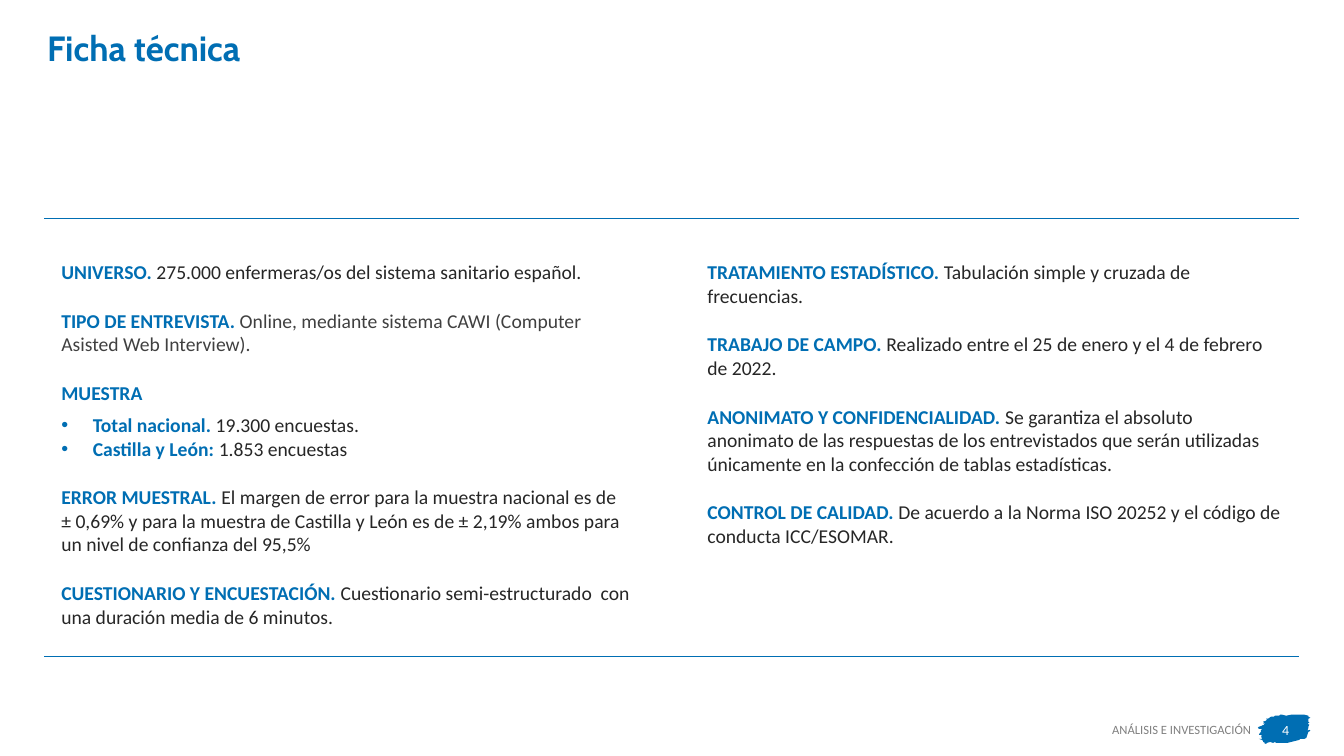
from copy import deepcopy

from lxml import etree
from pptx import Presentation
from pptx.dml.color import RGBColor
from pptx.enum.shapes import MSO_CONNECTOR, MSO_SHAPE
from pptx.enum.text import MSO_ANCHOR, PP_ALIGN
from pptx.oxml.ns import qn
from pptx.util import Pt

LEFT, RIGHT, CENTER = PP_ALIGN.LEFT, PP_ALIGN.RIGHT, PP_ALIGN.CENTER
MIDDLE = MSO_ANCHOR.MIDDLE
PILL = MSO_SHAPE.ROUNDED_RECTANGLE
STRAIGHT = MSO_CONNECTOR.STRAIGHT

COLORS = {"blue": "006EB3", "dark": "262626", "soft": "404040",
          "grey": "808080", "white": "FFFFFF"}

# Content: (heading, detail, detail color, space after, bulleted)
TITLE = "Ficha técnica"
FOOTER = "ANÁLISIS E INVESTIGACIÓN"
PAGE = "4"
SAMPLE_FACTS = [
    ("UNIVERSO.", " 275.000 enfermeras/os del sistema sanitario español.", "dark", 18, False),
    ("TIPO DE ENTREVISTA. ",
     "Online, mediante sistema CAWI (Computer Asisted Web Interview).", "soft", 18, False),
    ("MUESTRA", "", "dark", 6, False),
    ("Total nacional.", " 19.300 encuestas.", "dark", 0, True),
    ("Castilla y León: ", "1.853 encuestas", "dark", 18, True),
    ("ERROR MUESTRAL.",
     " El margen de error para la muestra nacional es de \n± 0,69% y para la muestra de "
     "Castilla y León es de ± 2,19% ambos para un nivel de confianza del 95,5%",
     "dark", 18, False),
    ("CUESTIONARIO Y ENCUESTACIÓN.",
     " Cuestionario semi-estructurado  con una duración media de 6 minutos.",
     "dark", 18, False),
]
PROCESS_FACTS = [
    ("TRATAMIENTO ESTADÍSTICO. ", "Tabulación simple y cruzada de frecuencias.",
     "dark", 18, False),
    ("TRABAJO DE CAMPO. ", "Realizado entre el 25 de enero y el 4 de febrero de 2022.",
     "dark", 18, False),
    ("ANONIMATO Y CONFIDENCIALIDAD. ",
     "Se garantiza el absoluto anonimato de las respuestas de los entrevistados que serán "
     "utilizadas únicamente en la confección de tablas estadísticas.", "dark", 18, False),
    ("CONTROL DE CALIDAD.",
     " De acuerdo a la Norma ISO 20252 y el código de conducta ICC/ESOMAR.",
     "dark", 18, False),
]
# Columns: (facts, left, height)
COLUMNS = [(SAMPLE_FACTS, 36.7, 272.9), (PROCESS_FACTS, 498.2, 214.6)]
COLUMN_TOP, COLUMN_WIDTH = 182.2, 425.5
RULES_Y = [156.2, 468.7]
RULE_LEFT, RULE_RIGHT = 31.7, 928.1

# Ragged brush stroke behind the page number, on a grid of 0.72 points
BRUSH_LEFT, BRUSH_TOP, BRUSH_STEP = 898.56, 510.48, 0.72
BRUSH = [
    (4, 23), (3, 22), (4, 21), (3, 20), (4.5, 20), (1, 19.5), (2, 18.5), (3, 17),
    (3, 15), (5, 14), (1, 14), (0, 13), (1, 12), (4, 11), (5, 10), (8, 10), (6, 9.5),
    (7, 8), (5, 9), (6, 8), (5, 7), (8, 6), (9, 5), (8, 4.5), (10, 3.5), (13, 2),
    (16, 2), (17, 1), (21, 1), (22, 0), (24, 0.5), (28, 1), (33, 0), (40, 0.3),
    (46, 0), (50, 1), (50, 2.5), (52, 3), (50, 3.5), (50, 7), (51, 8), (49, 9),
    (51, 10), (50, 12), (50.5, 13), (49, 15.5), (51, 15), (51.5, 16), (50, 17),
    (49, 20), (48, 23), (46, 24), (42, 24), (41, 25), (37, 26), (33, 27), (29, 28),
    (23, 28), (18, 28), (17, 27), (15, 28), (12, 27), (9, 28), (8, 29), (6, 28),
    (8, 28), (5, 27), (5, 26), (4, 25), (1, 24), (4, 24),
]


def color(name):
    return RGBColor.from_string(COLORS[name])


def style(run, font, size, tint, bold=False):
    run.font.name, run.font.size, run.font.bold = font, Pt(size), bold
    run.font.color.rgb = color(tint)


def text_frame_at(left, top, width, height, wrap=True):
    frame = slide.shapes.add_textbox(Pt(left), Pt(top), Pt(width), Pt(height)).text_frame
    frame.word_wrap = wrap
    return frame


def label(frame, text, font, size, tint, align=LEFT, bold=False):
    frame.text = text
    paragraph = frame.paragraphs[0]
    paragraph.alignment = align
    style(paragraph.runs[0], font, size, tint, bold)


def add_bullet(paragraph):
    props = paragraph._p.get_or_add_pPr()
    props.set("marL", str(Pt(22.5)))
    props.set("indent", str(-Pt(22.5)))
    etree.SubElement(props, qn("a:buFont")).set("typeface", "Arial")
    etree.SubElement(props, qn("a:buChar")).set("char", "•")


def write_fact(paragraph, heading, detail, tint, space_after, bulleted):
    if bulleted:
        add_bullet(paragraph)
    paragraph.space_after = Pt(space_after)
    paragraph.text = heading
    style(paragraph.runs[0], "Calibri", 14, "blue", True)
    for i, line in enumerate(detail.split("\n") if detail else []):
        if i:
            paragraph.add_line_break()
        run = paragraph.add_run()
        run.text = line
        style(run, "Calibri", 14, tint)
    # Line breaks take the size of the text around them
    for line_break in paragraph._p.findall(qn("a:br")):
        line_break.insert(0, deepcopy(paragraph.runs[-1]._r.rPr))


prs = Presentation()
prs.slide_width, prs.slide_height = Pt(960), Pt(540)
slide = prs.slides.add_slide(prs.slide_layouts[6])

# Footer: brush stroke, section name and page number
builder = slide.shapes.build_freeform(*BRUSH[0], scale=Pt(BRUSH_STEP))
builder.add_line_segments(BRUSH[1:], close=True)
brush = builder.convert_to_shape(Pt(BRUSH_LEFT), Pt(BRUSH_TOP))
brush.shadow.inherit = False
brush.fill.solid()
brush.fill.fore_color.rgb = color("blue")
brush.line.fill.background()

label(text_frame_at(786.2, 511.9, 114.5, 18, wrap=False), FOOTER, "Calibri", 9, "grey", RIGHT)

page = slide.shapes.add_shape(PILL, Pt(904.3), Pt(512.6), Pt(28.1), Pt(17.3))
page.adjustments[0] = 0.5
page.shadow.inherit = False
page.fill.background()
page.line.fill.background()
page.text_frame.word_wrap = False
page.text_frame.vertical_anchor = MIDDLE
label(page.text_frame, PAGE, "Calibri", 10, "white", CENTER)

# Title
label(text_frame_at(26.6, 15.1, 766.8, 37.4), TITLE, "Cabin", 25, "blue", bold=True)

# Two columns of facts
for facts, left, height in COLUMNS:
    frame = text_frame_at(left, COLUMN_TOP, COLUMN_WIDTH, height)
    for i, fact in enumerate(facts):
        write_fact(frame.add_paragraph() if i else frame.paragraphs[0], *fact)

# Rules above and below the columns
for y in RULES_Y:
    rule = slide.shapes.add_connector(STRAIGHT, Pt(RULE_LEFT), Pt(y), Pt(RULE_RIGHT), Pt(y))
    rule.line.color.rgb = color("blue")
    rule.line.width = Pt(0.75)
    etree.SubElement(rule._element.spPr, qn("a:effectLst"))

prs.save("out.pptx")
